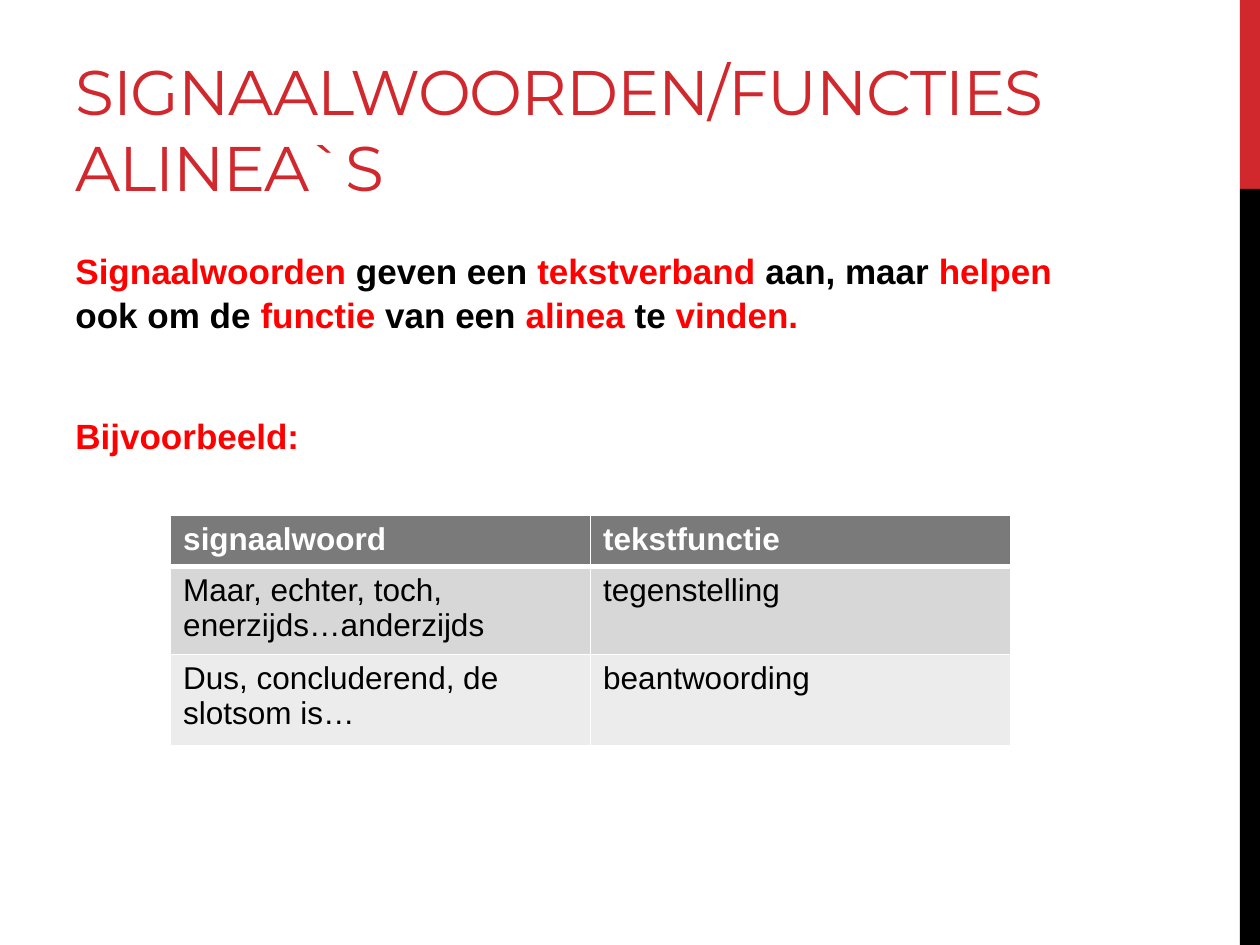
"""Build the slide on signal words and paragraph functions."""
from lxml.etree import SubElement
from pptx import Presentation
from pptx.dml.color import RGBColor
from pptx.enum.shapes import MSO_SHAPE as Shape
from pptx.enum.text import MSO_ANCHOR as Anchor
from pptx.oxml.ns import qn
from pptx.util import Pt

RED, DARK, WHITE, BLACK = "D1282E", "000000", "FFFFFF", "000000"
HOT = "FF0000"
TITLE = "SIGNAALWOORDEN/FUNCTIES ALINEA`S"
INTRO = [
    ("Signaalwoorden", HOT), (" geven een ", BLACK), ("tekstverband ", HOT),
    ("aan, maar ", BLACK), ("helpen ", HOT), ("ook om de ", BLACK),
    ("functie", HOT), (" van een ", BLACK), ("alinea", HOT),
    (" te ", BLACK), ("vinden.", HOT),
]
LABEL = [("Bijvoorbeeld:", HOT)]
ROWS = [
    ("signaalwoord", "tekstfunctie"),
    ("Maar, echter, toch, enerzijds…anderzijds", "tegenstelling"),
    ("Dus, concluderend, de slotsom is…", "beantwoording"),
]
FILLS = ["7A7A7A", "D7D7D7", "ECECEC"]
HEIGHTS = [29.2, 47.4, 51.8]
BARS = [(0, 108, RED), (108, 432, DARK)]
COL = 240


def color(code):
    return RGBColor.from_string(code)


def write(para, text, size=18, font="Arial", fill=BLACK, bold=False, track=0):
    run = para.add_run()
    run.text = text
    run.font.size, run.font.name, run.font.bold = Pt(size), font, bold
    run.font.color.rgb = color(fill)
    if track:
        run.font._element.set("spc", str(track))


def box(slide, left, top, width, height, anchor):
    frame = slide.shapes.add_textbox(Pt(left), Pt(top), Pt(width), Pt(height)).text_frame
    frame.word_wrap, frame.vertical_anchor = True, anchor
    return frame


def edge(cell, side, width):
    line = SubElement(cell._tc.get_or_add_tcPr(), qn(f"a:{side}"), w=str(Pt(width)))
    fill = SubElement(line, qn("a:solidFill"))
    SubElement(fill, qn("a:srgbClr"), val=WHITE)


def add_bars(slide):
    for top, height, fill in BARS:
        bar = slide.shapes.add_shape(Shape.RECTANGLE, Pt(708.5), Pt(top), Pt(11.5), Pt(height))
        bar.shadow.inherit = False
        bar.fill.solid()
        bar.fill.fore_color.rgb = color(fill)
        bar.line.fill.background()


def add_body(slide):
    frame = box(slide, 36, 138, 600, 344, Anchor.TOP)
    for i, (parts, gap) in enumerate([(INTRO, 0), (LABEL, 38)]):
        para = frame.add_paragraph() if i else frame.paragraphs[0]
        para.line_spacing = 1.05
        para.space_before, para.space_after = Pt(gap), Pt(6)
        for text, fill in parts:
            write(para, text, size=20, fill=fill, bold=True)


def add_grid(slide):
    cols = len(ROWS[0])
    grid = slide.shapes.add_table(
        len(ROWS), cols, Pt(97.5), Pt(294.5), Pt(cols * COL), Pt(sum(HEIGHTS))).table
    for col in grid.columns:
        col.width = Pt(COL)
    for i, row in enumerate(ROWS):
        grid.rows[i].height = Pt(HEIGHTS[i])
        for j, text in enumerate(row):
            cell = grid.cell(i, j)
            head = i == 0
            write(cell.text_frame.paragraphs[0], text,
                  fill=WHITE if head else BLACK, bold=head)
            widths = {"lnL": 1, "lnR": 1, "lnT": 3 if i == 1 else 1, "lnB": 3 if head else 1}
            for side, width in widths.items():
                edge(cell, side, width)
            cell.fill.solid()
            cell.fill.fore_color.rgb = color(FILLS[i])


def main():
    deck = Presentation()
    deck.slide_width, deck.slide_height = Pt(720), Pt(540)
    slide = deck.slides.add_slide(deck.slide_layouts[6])
    add_bars(slide)
    title = box(slide, 36, 12, 640, 108, Anchor.BOTTOM)
    write(title.paragraphs[0], TITLE, size=36, font="Montserrat", fill=RED, track=-60)
    add_body(slide)
    add_grid(slide)
    deck.save("out.pptx")


if __name__ == "__main__":
    main()
